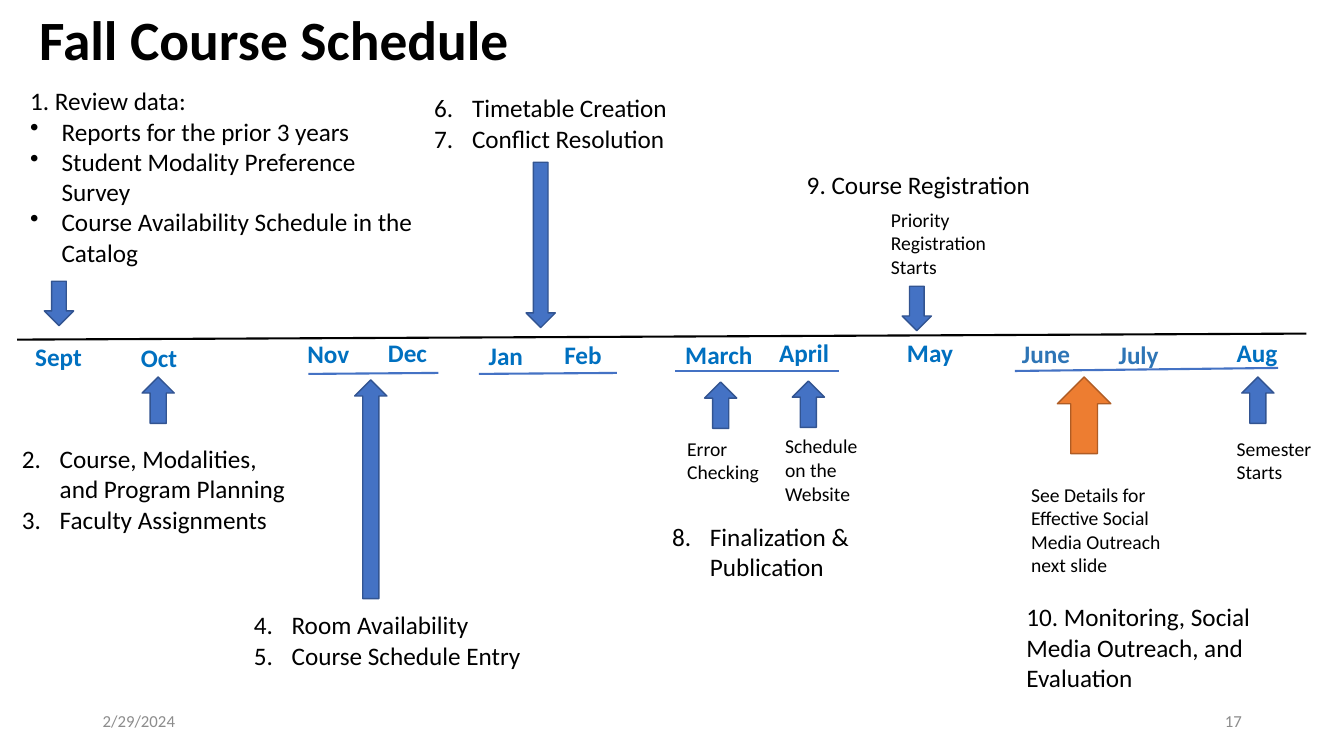
from lxml.etree import SubElement
from pptx import Presentation
from pptx.dml.color import RGBColor
from pptx.enum.shapes import MSO_CONNECTOR, MSO_SHAPE
from pptx.enum.text import MSO_ANCHOR, MSO_AUTO_SIZE, PP_ALIGN
from pptx.oxml.ns import qn
from pptx.util import Pt

BLACK = RGBColor(0x00, 0x00, 0x00)
GREY = RGBColor(0x8C, 0x8C, 0x8C)
MONTH_BLUE = RGBColor(0x00, 0x70, 0xC0)
SUMMER_BLUE = RGBColor(0x2E, 0x75, 0xB6)
BLUE = RGBColor(0x44, 0x72, 0xC4)
DARK_BLUE = RGBColor(0x32, 0x54, 0x91)
ORANGE = RGBColor(0xED, 0x7D, 0x31)
DARK_ORANGE = RGBColor(0xAF, 0x5C, 0x24)

MONTHS = [
    ("Sept", 18, 240.5, 48, MONTH_BLUE),
    ("Oct", 93.6, 241.2, 40.3, MONTH_BLUE),
    ("Nov", 212.4, 238.3, 44.6, MONTH_BLUE),
    ("Dec", 270, 237.6, 42.5, MONTH_BLUE),
    ("Jan", 342, 239.8, 39.6, MONTH_BLUE),
    ("Feb", 396, 239, 41, MONTH_BLUE),
    ("March", 482.4, 239, 62.6, MONTH_BLUE),
    ("April", 549.4, 237.6, 50.4, MONTH_BLUE),
    ("May", 640.8, 237.6, 47.5, MONTH_BLUE),
    ("June", 722.9, 238.3, 49, SUMMER_BLUE),
    ("July", 792, 239, 43.2, SUMMER_BLUE),
    ("Aug", 876.2, 237.6, 44, MONTH_BLUE),
]
MONTH_GROUP_LINES = [
    (313.2, 266.4, 220.3, 267.1),
    (440.6, 266.4, 342, 267.1),
    (599, 265, 482.4, 265),
    (913, 262.8, 725, 265),
]
DOWN_ARROWS = [
    (31.7, 200.9, 31.7),
    (375.8, 115.9, 118.1),
    (644.4, 204.5, 31.7),
]
UP_ARROWS = [
    (101.5, 269.3, 33.1),
    (253.4, 271.4, 156.2),
    (503.3, 272.9, 33.1),
    (565.9, 272.2, 33.1),
    (887, 269.3, 33.1),
]
NUMBERED_STEPS = [
    (2, ["Course, Modalities, and Program Planning", "Faculty Assignments"],
     (8.6, 313.2, 211, 72.7)),
    (4, ["Room Availability", "Course Schedule Entry"], (174.2, 432, 207.4, 51.1)),
    (6, ["Timetable Creation", "Conflict Resolution"], (303.1, 62.6, 218.9, 51.1)),
    (8, ["Finalization & Publication"], (473, 368.6, 173.5, 51.1)),
]
MILESTONES = [
    ("Priority Registration Starts", (629.3, 144.7, 92.9, 58.3)),
    ("Error Checking", (483.8, 308.2, 74.2, 40.8)),
    ("Schedule on the Website", (553.7, 306.7, 74.2, 58.3)),
    ("See Details for Effective Social Media Outreach next slide",
     (729.4, 341.3, 113.8, 74.9)),
    ("Semester Starts", (876.2, 308.2, 74.2, 40.8)),
]


class ScheduleSlide:
    font = "Calibri"
    text_size = 18
    line_width = 1.5

    def __init__(self, presentation):
        self.slide = presentation.slides.add_slide(presentation.slide_layouts[6])

    def text(self, lines, box, size=text_size, color=BLACK, bold=False, wrap=True,
             anchor=MSO_ANCHOR.TOP, align=PP_ALIGN.LEFT, spacing=1.0):
        shape = self.slide.shapes.add_textbox(*map(Pt, box))
        frame = shape.text_frame
        frame.text = "\n".join(lines)
        frame.word_wrap = wrap
        frame.auto_size = MSO_AUTO_SIZE.NONE
        frame.vertical_anchor = anchor
        for paragraph in frame.paragraphs:
            paragraph.alignment = align
            paragraph.line_spacing = spacing
            for run in paragraph.runs:
                run.font.name = self.font
                run.font.size = Pt(size)
                run.font.bold = bold
                run.font.color.rgb = color
        return frame.paragraphs

    def mark(self, paragraphs, indent, tag, **attributes):
        for paragraph in paragraphs:
            properties = paragraph._p.get_or_add_pPr()
            properties.set("marL", str(Pt(indent)))
            properties.set("indent", str(Pt(-indent)))
            SubElement(properties, qn(tag), attributes)

    def bullets(self, heading, items, box):
        paragraphs = self.text([heading, *items], box)
        self.mark(paragraphs[1:], 22.5, "a:buChar", char="•")

    def numbers(self, start, items, box):
        paragraphs = self.text(items, box)
        self.mark(paragraphs, 27, "a:buAutoNum", type="arabicPeriod", startAt=str(start))

    def arrow(self, preset, box, fill=BLUE, outline=DARK_BLUE):
        shape = self.slide.shapes.add_shape(preset, *map(Pt, box))
        shape.shadow.inherit = False
        shape.fill.solid()
        shape.fill.fore_color.rgb = fill
        shape.line.color.rgb = outline
        shape.line.width = Pt(1)

    def line(self, ends, color=BLUE):
        connector = self.slide.shapes.add_connector(MSO_CONNECTOR.STRAIGHT, *map(Pt, ends))
        connector.line.color.rgb = color
        connector.line.width = Pt(self.line_width)
        SubElement(connector._element.spPr, qn("a:effectLst"))


def main():
    presentation = Presentation()
    presentation.slide_width = Pt(960)
    presentation.slide_height = Pt(540)
    schedule = ScheduleSlide(presentation)

    schedule.text(["Fall Course Schedule"], (20.9, 9.4, 828, 41.8), size=39.6, bold=True,
                  anchor=MSO_ANCHOR.MIDDLE, spacing=0.9)
    schedule.text(["2/29/2024"], (66.2, 500.4, 216, 28.8), size=12, color=GREY,
                  anchor=MSO_ANCHOR.MIDDLE)
    schedule.text(["17"], (678.2, 500.4, 216, 28.8), size=12, color=GREY,
                  anchor=MSO_ANCHOR.MIDDLE, align=PP_ALIGN.RIGHT)

    schedule.line((12.2, 242.6, 933.1, 238.3), BLACK)
    for month, left, top, width, color in MONTHS:
        schedule.text([month], (left, top, width, 28.8), color=color, bold=True, wrap=False)
    for ends in MONTH_GROUP_LINES:
        schedule.line(ends)

    for left, top, height in DOWN_ARROWS:
        schedule.arrow(MSO_SHAPE.DOWN_ARROW, (left, top, 20.9, height))
    for left, top, height in UP_ARROWS:
        schedule.arrow(MSO_SHAPE.UP_ARROW, (left, top, 23, height))
    schedule.arrow(MSO_SHAPE.UP_ARROW, (755.3, 269.3, 38.2, 54.7), ORANGE, DARK_ORANGE)

    schedule.bullets("1. Review data:",
                     ["Reports for the prior 3 years",
                      "Student Modality Preference Survey",
                      "Course Availability Schedule in the Catalog"],
                     (14.4, 57.6, 288.7, 138.2))
    for start, items, box in NUMBERED_STEPS:
        schedule.numbers(start, items, box)
    schedule.text(["9. Course Registration"], (569.2, 117.4, 175.7, 28.8), wrap=False)
    schedule.text(["10. Monitoring, Social Media Outreach, and Evaluation"],
                  (726, 426.2, 210, 72.7))
    for milestone, box in MILESTONES:
        schedule.text([milestone], box, size=14)

    presentation.save("out.pptx")


if __name__ == "__main__":
    main()
